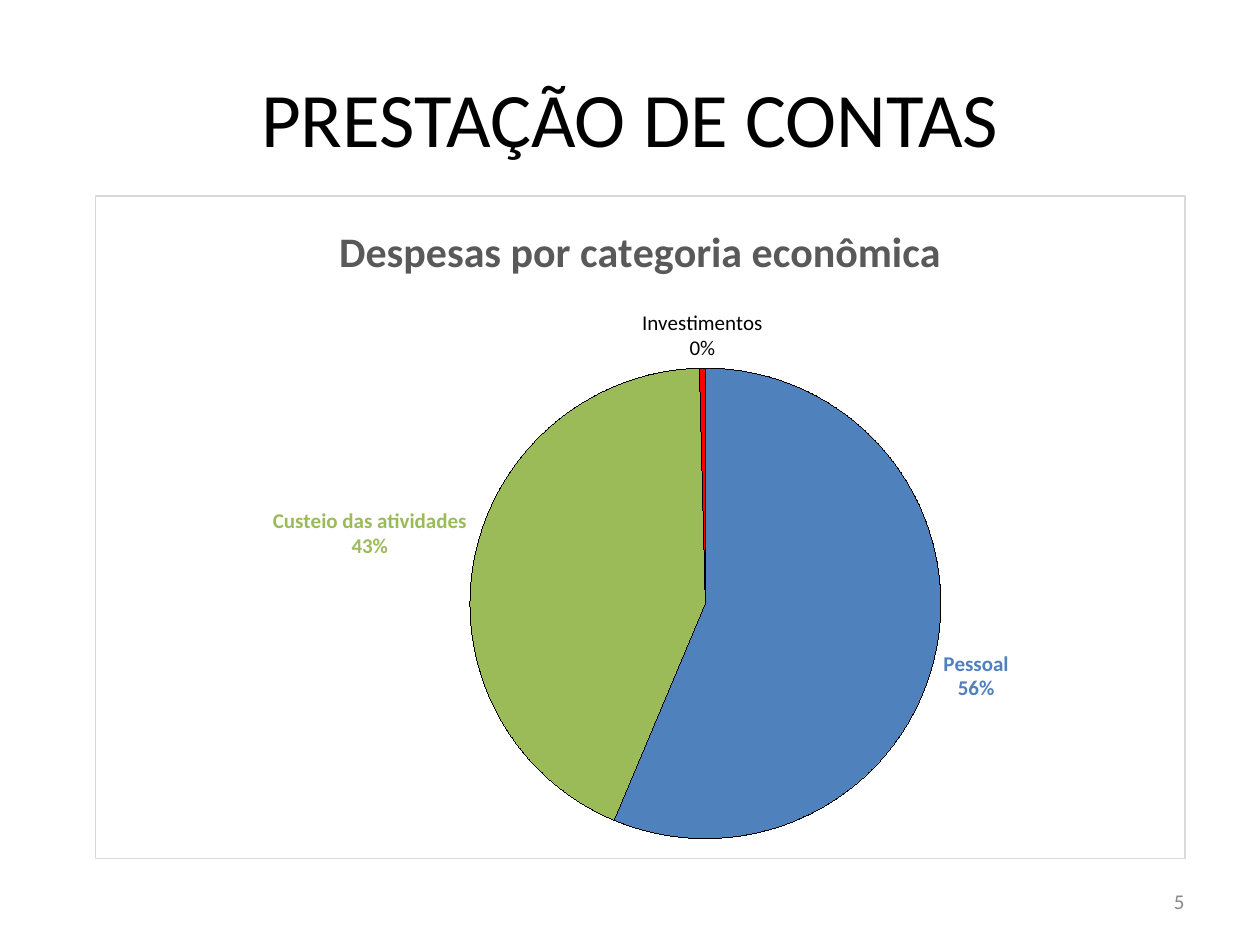
from lxml.etree import SubElement
from pptx import Presentation
from pptx.chart.data import CategoryChartData
from pptx.dml.color import RGBColor
from pptx.enum.chart import XL_CHART_TYPE, XL_LABEL_POSITION
from pptx.enum.shapes import MSO_SHAPE
from pptx.enum.text import MSO_ANCHOR, PP_ALIGN
from pptx.oxml import parse_xml
from pptx.oxml.ns import nsdecls, qn
from pptx.util import Inches, Pt

FONT = "Calibri"
EXPENSES = [
    ("Pessoal", 56, "4F81BD", "4F81BD", True),
    ("Custeio das atividades", 43, "9BBB59", "9BBB59", True),
    ("Investimentos", 0.4, "FF0000", "000000", False),
]


def color(value):
    """Turn a hex string into a colour."""
    return RGBColor.from_string(value)


def set_font(font, size, fill, bold=False):
    """Apply the shared typeface with a size, colour and weight."""
    font.name = FONT
    font.size = Pt(size)
    font.bold = bold
    font.color.rgb = color(fill)


def write_text(box, text, *, size, fill, align):
    """Write a vertically centred line of text into a box."""
    frame = box.text_frame
    frame.word_wrap = True
    frame.vertical_anchor = MSO_ANCHOR.MIDDLE
    para = frame.paragraphs[0]
    para.alignment = align
    span = para.add_run()
    span.text = text
    set_font(span.font, size, fill)


def add_title(page, text, left, top, width, height):
    """Add the white title panel."""
    box = page.shapes.add_shape(
        MSO_SHAPE.RECTANGLE, Inches(left), Inches(top), Inches(width), Inches(height))
    box.shadow.inherit = False
    box.fill.solid()
    box.fill.fore_color.rgb = color("FFFFFF")
    box.line.fill.background()
    write_text(box, text, size=44, fill="000000", align=PP_ALIGN.CENTER)


def add_page_number(page, text, left, top, width, height):
    """Add the right-aligned page number."""
    box = page.shapes.add_textbox(
        Inches(left), Inches(top), Inches(width), Inches(height))
    write_text(box, text, size=12, fill="898989", align=PP_ALIGN.RIGHT)


def show_category_and_percent(labels):
    """Make a label element show category and percentage on two lines."""
    for name, value in (("showVal", "0"), ("showCatName", "1"), ("showPercent", "1")):
        labels.find(qn(f"c:{name}")).set("val", value)
    separator = SubElement(labels, qn("c:separator"))
    separator.text = "\n"
    labels.find(qn("c:showBubbleSize")).addnext(separator)


def set_outline(line, width):
    """Draw a black outline of the given width."""
    line.color.rgb = color("000000")
    line.width = Pt(width)


def style_slice(point, fill, label_fill, bold):
    """Colour a slice and its outside label."""
    point.format.fill.solid()
    point.format.fill.fore_color.rgb = color(fill)
    set_outline(point.format.line, 0)
    set_font(point.data_label.font, 12, label_fill, bold)
    point.data_label.position = XL_LABEL_POSITION.OUTSIDE_END


def frame_chart(chart):
    """Give the chart a white ground, a grey border and a fixed pie area."""
    space = chart.element
    space.find(qn("c:chart")).addnext(parse_xml(
        f'<c:spPr {nsdecls("c", "a")}>'
        '<a:solidFill><a:srgbClr val="FFFFFF"/></a:solidFill>'
        '<a:ln w="9525"><a:solidFill><a:srgbClr val="D9D9D9"/></a:solidFill></a:ln>'
        '</c:spPr>'))
    area = space.find(".//" + qn("c:plotArea"))
    for layout in area.findall(qn("c:layout")):
        area.remove(layout)
    sizes = "".join(
        f'<c:{name} val="{value}"/>'
        for name, value in (("x", 0.34), ("y", 0.26), ("w", 0.44), ("h", 0.71)))
    area.insert(0, parse_xml(
        f'<c:layout {nsdecls("c")}><c:manualLayout><c:layoutTarget val="inner"/>'
        f'<c:xMode val="edge"/><c:yMode val="edge"/>{sizes}'
        '</c:manualLayout></c:layout>'))


def add_expense_pie(page, left, top, width, height):
    """Add the pie of expenses by category."""
    data = CategoryChartData()
    data.categories = [expense[0] for expense in EXPENSES]
    data.add_series("Series 1", [expense[1] for expense in EXPENSES])
    chart = page.shapes.add_chart(
        XL_CHART_TYPE.PIE, Inches(left), Inches(top),
        Inches(width), Inches(height), data).chart
    frame_chart(chart)
    set_font(chart.font, 10, "000000")
    chart.has_legend = False
    chart.has_title = True
    title = chart.chart_title.text_frame
    title.text = "Despesas por categoria econômica"
    set_font(title.paragraphs[0].runs[0].font, 24, "595959", True)

    plot = chart.plots[0]
    plot.vary_by_categories = True
    series = plot.series[0]
    set_outline(series.format.line, 0.75)
    labels = series.data_labels
    labels.number_format = "0%"
    labels.number_format_is_linked = False
    labels.position = XL_LABEL_POSITION.OUTSIDE_END
    set_font(labels.font, 12, "000000")
    for index, (_, _, fill, label_fill, bold) in enumerate(EXPENSES):
        style_slice(series.points[index], fill, label_fill, bold)
    group = chart.element.find(".//" + qn("c:dLbls"))
    for element in [group, *group.findall(qn("c:dLbl"))]:
        show_category_and_percent(element)


def main():
    """Build the slide and save the deck."""
    deck = Presentation()
    deck.slide_width, deck.slide_height = Inches(10), Inches(7.5)
    page = deck.slides.add_slide(deck.slide_layouts[6])
    add_page_number(page, "5", 7.17, 6.95, 2.33, 0.4)
    add_title(page, "PRESTAÇÃO DE CONTAS", 0.5, 0.3, 9, 1.25)
    add_expense_pie(page, 0.75, 1.55, 8.66, 5.27)
    deck.save("out.pptx")


if __name__ == "__main__":
    main()
